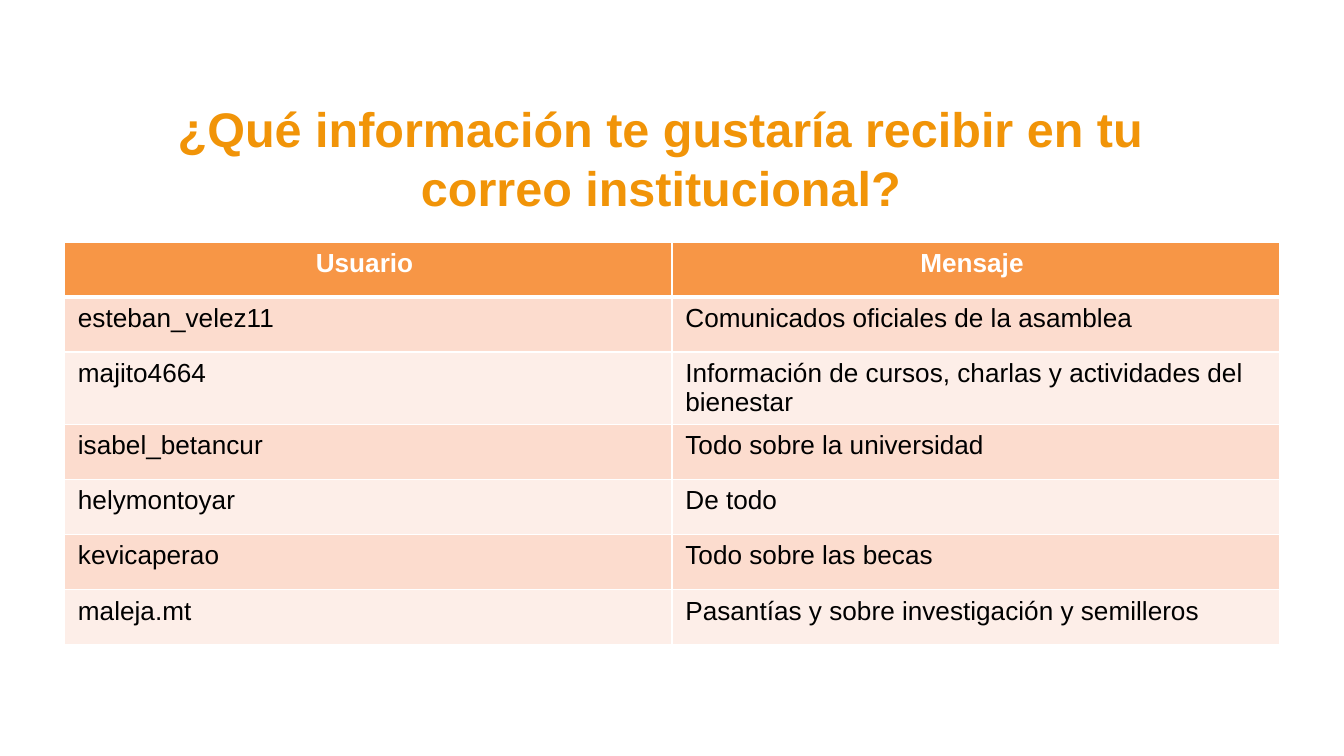
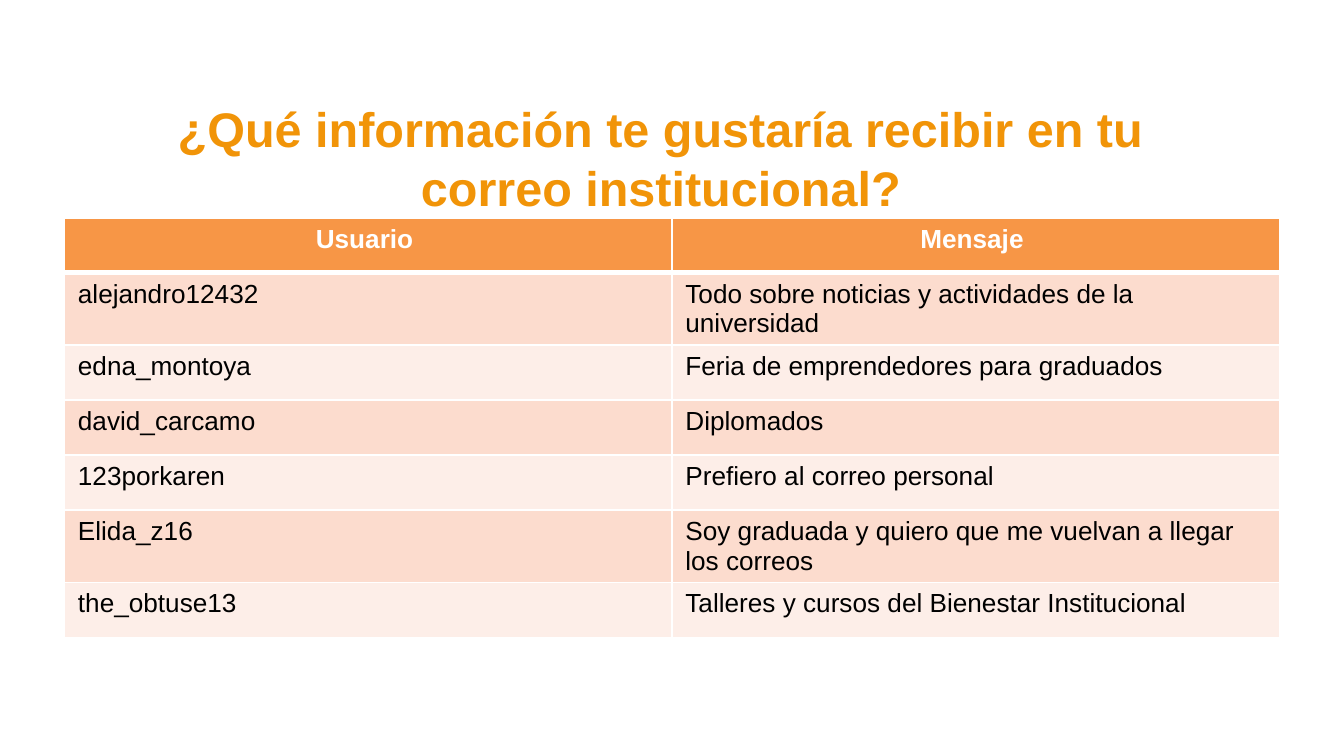
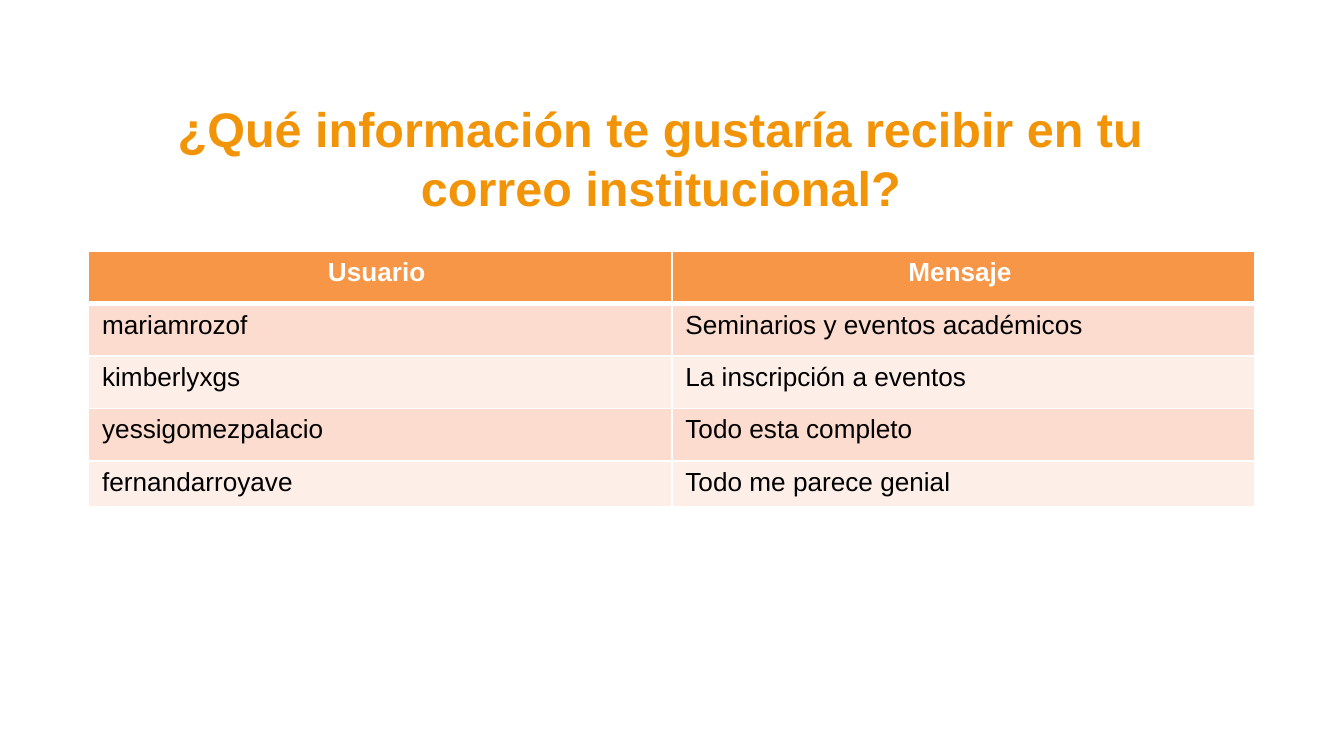
"""Build three slides of survey answers, each with a shared title and a two-column table."""
from dataclasses import dataclass

from lxml.etree import SubElement
from pptx import Presentation
from pptx.dml.color import RGBColor
from pptx.enum.text import MSO_ANCHOR as Anchor, MSO_AUTO_SIZE as AutoSize, PP_ALIGN as Align
from pptx.oxml import parse_xml
from pptx.oxml.ns import nsdecls, qn
from pptx.util import Inches, Pt

TITLE = ["¿Qué información te gustaría recibir en tu", "correo institucional?"]
HEADER = ("Usuario ", "Mensaje ")
SURVEYS = [
    {
        "margin": 0.48, "top": 1.8, "row_height": 0.41, "last_height": 0.41,
        "answers": [
            ("esteban_velez11", "Comunicados oficiales de la asamblea"),
            ("majito4664", "Información de cursos, charlas y actividades del bienestar"),
            ("isabel_betancur", "Todo sobre la universidad"),
            ("helymontoyar", "De todo"),
            ("kevicaperao", "Todo sobre las becas"),
            ("maleja.mt", "Pasantías y sobre investigación y semilleros"),
        ],
    },
    {
        "margin": 0.48, "top": 1.62, "row_height": 0.41, "last_height": 0.41,
        "answers": [
            ("alejandro12432", "Todo sobre noticias y actividades de la universidad"),
            ("edna_montoya", "Feria de emprendedores para graduados"),
            ("david_carcamo", "Diplomados"),
            ("123porkaren", "Prefiero al correo personal"),
            ("Elida_z16", "Soy graduada y quiero que me vuelvan a llegar los correos"),
            ("the_obtuse13", "Talleres y cursos del Bienestar Institucional"),
        ],
    },
    {
        "margin": 0.66, "top": 1.87, "row_height": 0.39, "last_height": 0.34,
        "answers": [
            ("mariamrozof", "Seminarios y eventos académicos"),
            ("kimberlyxgs", "La inscripción a eventos"),
            ("yessigomezpalacio", "Todo esta completo"),
            ("fernandarroyave", "Todo me parece genial"),
        ],
    },
]


@dataclass(frozen=True)
class Theme:
    font: str = "Arial"
    title: str = "F19408"
    header: str = "F79646"
    bands: tuple = ("FCDCCE", "FDEEE8")
    white: str = "FFFFFF"
    text: str = "000000"
    title_size: int = 26
    table_size: int = 14
    thin: int = 1
    thick: int = 3


THEME = Theme()
WIDTH = 10
HEIGHT = WIDTH * 9 / 16
TITLE_BOX = (0.48, 0.69, 8.88, 1.03)


def write_text(frame, lines, size=THEME.table_size, color=THEME.text, bold=False, align=Align.LEFT):
    frame.text = "\n".join(lines)
    for paragraph in frame.paragraphs:
        paragraph.alignment = align
        for run in paragraph.runs:
            run.font.name = THEME.font
            run.font.size = Pt(size)
            run.font.bold = bold
            run.font.color.rgb = RGBColor.from_string(color)


def set_borders(cell, top, bottom):
    properties = cell._tc.get_or_add_tcPr()
    widths = {"lnL": THEME.thin, "lnR": THEME.thin, "lnT": top, "lnB": bottom}
    for position, (side, width) in enumerate(widths.items()):
        line = parse_xml(f'<a:{side} {nsdecls("a")} w="{Pt(width)}"/>')
        fill = SubElement(line, qn("a:solidFill"))
        SubElement(fill, qn("a:srgbClr"), val=THEME.white)
        properties.insert(position, line)


def add_title(slide):
    title = slide.shapes.title
    title.left, title.top, title.width, title.height = map(Inches, TITLE_BOX)
    frame = title.text_frame
    frame.word_wrap = True
    frame.auto_size = AutoSize.NONE
    frame.vertical_anchor = Anchor.TOP
    write_text(frame, TITLE, size=THEME.title_size, color=THEME.title, bold=True, align=Align.CENTER)


def add_answers(slide, survey):
    rows = [HEADER, *survey["answers"]]
    heights = [survey["row_height"]] * (len(rows) - 1) + [survey["last_height"]]
    table_width = WIDTH - 2 * survey["margin"]
    box = (survey["margin"], survey["top"], table_width, sum(heights))
    table = slide.shapes.add_table(len(rows), len(HEADER), *map(Inches, box)).table
    for column in table.columns:
        column.width = Inches(table_width / len(HEADER))
    for index, (row, height) in enumerate(zip(rows, heights)):
        table.rows[index].height = Inches(height)
        is_header = index == 0
        fill = THEME.header if is_header else THEME.bands[(index - 1) % 2]
        style = {"color": THEME.white, "bold": True, "align": Align.CENTER} if is_header else {}
        for cell, text in zip(table.rows[index].cells, row):
            cell.fill.solid()
            cell.fill.fore_color.rgb = RGBColor.from_string(fill)
            set_borders(cell, top=THEME.thick if index == 1 else THEME.thin,
                        bottom=THEME.thick if is_header else THEME.thin)
            write_text(cell.text_frame, [text], **style)


def main():
    presentation = Presentation()
    presentation.slide_width, presentation.slide_height = Inches(WIDTH), Inches(HEIGHT)
    title_only = presentation.slide_layouts.get_by_name("Title Only")
    for survey in SURVEYS:
        slide = presentation.slides.add_slide(title_only)
        add_title(slide)
        add_answers(slide, survey)
    presentation.save("out.pptx")


if __name__ == "__main__":
    main()
